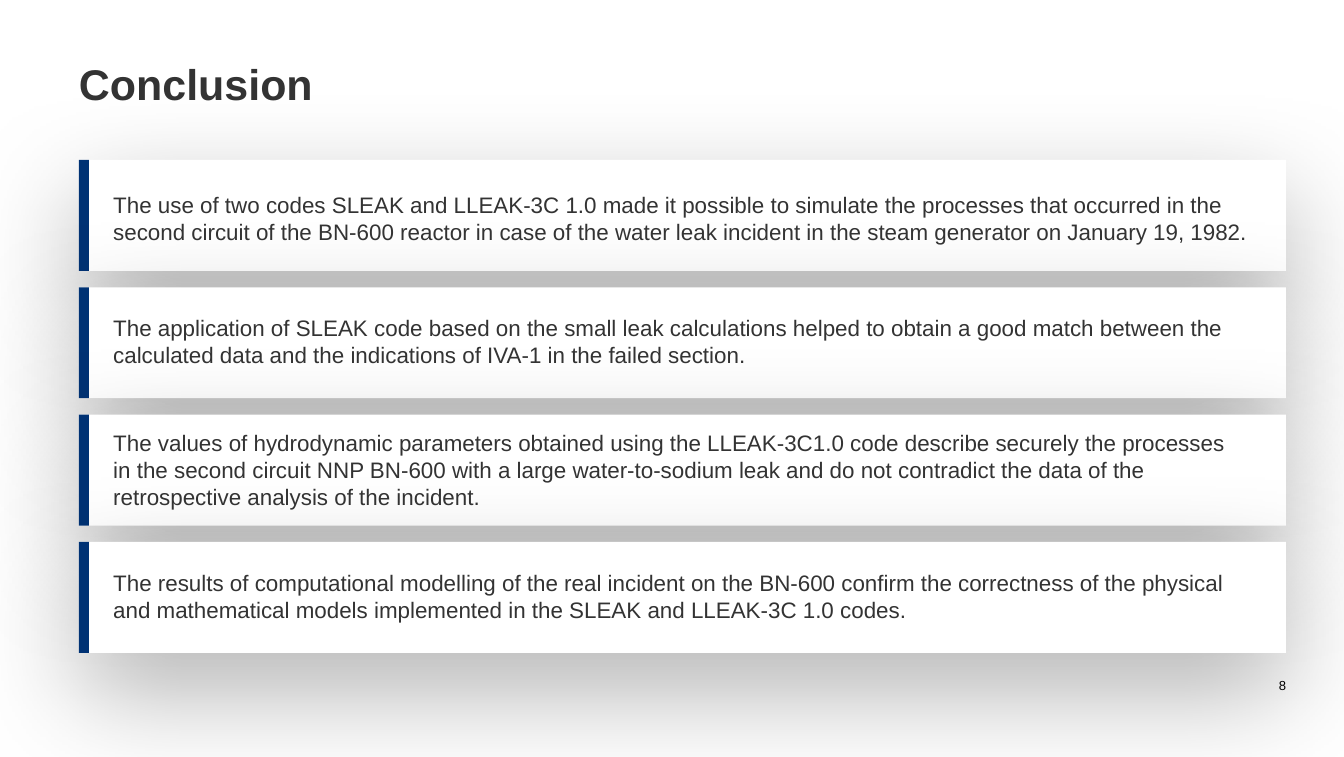
import pptx
import pptx.util
import pptx.dml.color
import pptx.enum.shapes
import pptx.enum.text
import pptx.oxml
import pptx.oxml.ns

PX = 914400 / 134.4
RECTANGLE = pptx.enum.shapes.MSO_SHAPE.RECTANGLE
ANCHOR = pptx.enum.text.MSO_ANCHOR
ALIGN = pptx.enum.text.PP_ALIGN
INK, NAVY, WHITE, BLACK = "333333", "003274", "FFFFFF", "000000"


def px(*lengths):
    return [pptx.util.Emu(round(length * PX)) for length in lengths]


def color(hex_value):
    return pptx.dml.color.RGBColor.from_string(hex_value)


deck = pptx.Presentation()
deck.slide_width, deck.slide_height = px(1344, 757)
slide = deck.slides.add_slide(deck.slide_layouts[5])

# Page number
page_number = slide.shapes.add_textbox(*px(1203, 673, 83, 20))

# Cards: soft-shadowed panel with a navy bar on the left edge
CARD_LEFT, CARD_WIDTH, CARD_HEIGHT, BAR_WIDTH = 79, 1207, 111, 10
FIRST_TOP, LAST_TOP, CARD_COUNT = 160, 542, 4
SHADOW = (
    f'<a:effectLst {pptx.oxml.ns.nsdecls("a")}>'
    f'<a:outerShdw blurRad="{pptx.util.Pt(60)}" dist="{pptx.util.Pt(20)}"'
    ' dir="5400000" algn="t" rotWithShape="0">'
    f'<a:srgbClr val="{BLACK}"><a:alpha val="30000"/></a:srgbClr>'
    '</a:outerShdw></a:effectLst>'
)
for row in range(CARD_COUNT):
    card = slide.shapes.add_group_shape()
    card_top = FIRST_TOP + row * (LAST_TOP - FIRST_TOP) / (CARD_COUNT - 1)
    for width, fill in ((CARD_WIDTH, WHITE), (BAR_WIDTH, NAVY)):
        part = card.shapes.add_shape(
            RECTANGLE, *px(CARD_LEFT, card_top, width, CARD_HEIGHT))
        part.fill.solid()
        part.fill.fore_color.rgb = color(fill)
        part.line.fill.background()
        part.shadow.inherit = False
        if fill == WHITE:
            properties = part.element.spPr
            properties.remove(properties.find(pptx.oxml.ns.qn("a:effectLst")))
            properties.append(pptx.oxml.parse_xml(SHADOW))

# Title, in front of the card shadows
title = slide.shapes.title
title.left, title.top, title.width, title.height = px(79, 63, 1064, 49)
slide.shapes.element.append(title.element)

# Unpadded texts: title and page number
for box, text, size, bold, ink, align, anchor in (
    (title, "Conclusion", 23, True, INK, ALIGN.LEFT, ANCHOR.TOP),
    (page_number, "8", 7, False, BLACK, ALIGN.RIGHT, ANCHOR.BOTTOM),
):
    frame = box.text_frame
    frame_format = {
        "margin_left": 0, "margin_top": 0, "margin_right": 0, "margin_bottom": 0,
        "word_wrap": True, "vertical_anchor": anchor,
        "auto_size": pptx.enum.text.MSO_AUTO_SIZE.NONE,
    }
    for name, value in frame_format.items():
        setattr(frame, name, value)
    frame.text = text
    line = frame.paragraphs[0]
    line.alignment = align
    font_format = {"name": "Arial", "size": pptx.util.Pt(size), "bold": bold}
    for name, value in font_format.items():
        setattr(line.runs[0].font, name, value)
    line.runs[0].font.color.rgb = color(ink)
title.text_frame.paragraphs[0].line_spacing = 0.9

# Conclusions: top, width, height, text
conclusions = (
    (185, 1186, 67,
     "The use of two codes SLEAK and LLEAK-3C 1.0 made it possible to simulate "
     "the processes that occurred in the second circuit of the BN-600 reactor in "
     "case of the water leak incident in the steam generator on January 19, 1982."),
    (308, 1141, 67,
     "The application of SLEAK code based on the small leak calculations helped "
     "to obtain a good match between the calculated data and the indications of "
     "IVA-1 in the failed section."),
    (423, 1163, 95,
     "The values of hydrodynamic parameters obtained using the LLEAK-3C1.0 code "
     "describe securely the processes in the second circuit NNP BN-600 with a "
     "large water-to-sodium leak and do not contradict the data of the "
     "retrospective analysis of the incident."),
    (563, 1141, 67,
     "The results of computational modelling of the real incident on the BN-600 "
     "confirm the correctness of the physical and mathematical models implemented "
     "in the SLEAK and LLEAK-3C 1.0 codes."),
)
for top, width, height, text in conclusions:
    conclusion = slide.shapes.add_textbox(*px(100, top, width, height)).text_frame
    conclusion.word_wrap = True
    conclusion.auto_size = pptx.enum.text.MSO_AUTO_SIZE.SHAPE_TO_FIT_TEXT
    conclusion.text = text
    font = conclusion.paragraphs[0].runs[0].font
    font.name, font.size = "Arial", pptx.util.Pt(12)
    font.color.rgb = color(INK)

deck.save("out.pptx")
